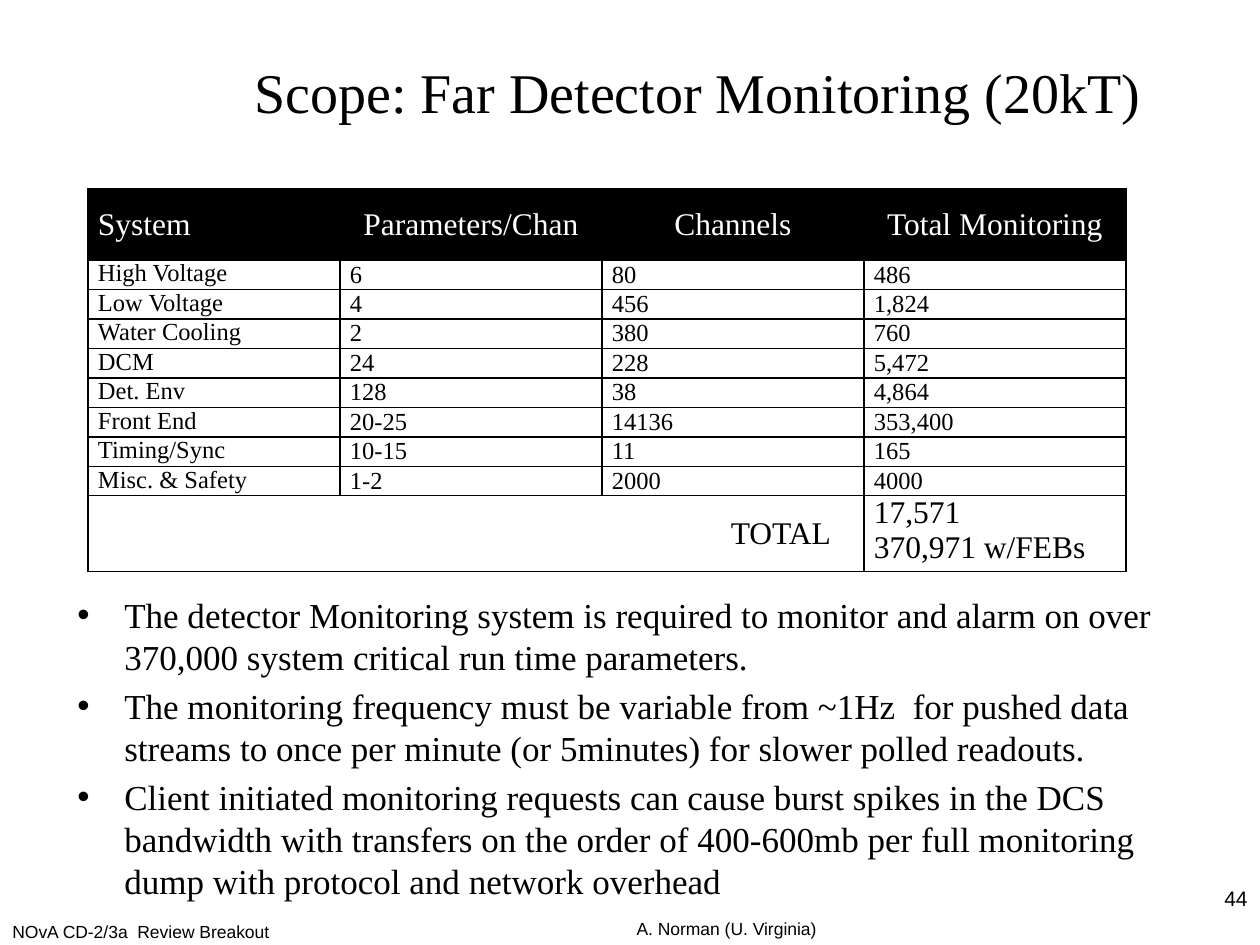
from lxml import etree
from pptx import Presentation, util as u
from pptx.dml.color import RGBColor
from pptx.enum import text as t
from pptx.oxml import ns

SCALE = u.Inches(1) // 126
BLACK = RGBColor(0, 0, 0)
WHITE = RGBColor(255, 255, 255)
SERIF, SANS = "Times New Roman", "Arial"
LEFT, MID, RIGHT = t.PP_ALIGN.LEFT, t.PP_ALIGN.CENTER, t.PP_ALIGN.RIGHT
TOP, CENTER = t.MSO_ANCHOR.TOP, t.MSO_ANCHOR.MIDDLE

HEAD = ["System", "Parameters/Chan", "Channels", "Total Monitoring"]
ROWS = [
    ["High Voltage", "6", "80", "486"],
    ["Low Voltage", "4", "456", "1,824"],
    ["Water Cooling", "2", "380", "760"],
    ["DCM", "24", "228", "5,472"],
    ["Det. Env", "128", "38", "4,864"],
    ["Front End", "20-25", "14136", "353,400"],
    ["Timing/Sync", "10-15", "11", "165"],
    ["Misc. & Safety", "1-2", "2000", "4000"],
]
POINTS = [
    "The detector Monitoring system is required to monitor and alarm on over "
    "370,000 system critical run time parameters.",
    "The monitoring frequency must be variable from ~1Hz  for pushed data "
    "streams to once per minute (or 5minutes) for slower polled readouts.",
    "Client initiated monitoring requests can cause burst spikes in the DCS "
    "bandwidth with transfers on the order of 400-600mb per full monitoring "
    "dump with protocol and network overhead",
]


def px(n):
    return u.Emu(n * SCALE)


def add_bullet(para):
    props = para._p.get_or_add_pPr()
    props.set("marL", str(px(47)))
    props.set("indent", str(px(-47)))
    font = etree.SubElement(props, ns.qn("a:buFont"))
    font.set("typeface", SANS)
    etree.SubElement(props, ns.qn("a:buChar")).set("char", "•")


def write(frame, lines, size, face=SERIF, color=BLACK, align=LEFT,
          bullet=False, gap=0, pitch=None):
    frame.word_wrap = True
    for i, line in enumerate(lines):
        para = frame.add_paragraph() if i else frame.paragraphs[0]
        para.alignment = align
        if bullet:
            add_bullet(para)
        if i and gap:
            para.space_before = u.Pt(gap)
        if pitch:
            para.line_spacing = u.Pt(pitch)
        run = para.add_run()
        run.text = line
        run.font.size = u.Pt(size)
        run.font.name = face
        run.font.color.rgb = color


def add_text(slide, box, lines, size, anchor=TOP, **style):
    frame = slide.shapes.add_textbox(*map(px, box)).text_frame
    frame.vertical_anchor = anchor
    write(frame, lines, size, **style)


def add_borders(cell):
    props = cell._tc.get_or_add_tcPr()
    for i, side in enumerate(("lnL", "lnR", "lnT", "lnB")):
        line = etree.Element(ns.qn("a:" + side), w=str(u.Pt(1)))
        fill = etree.SubElement(line, ns.qn("a:solidFill"))
        etree.SubElement(fill, ns.qn("a:srgbClr"), val=str(BLACK))
        props.insert(i, line)


def fill_cell(cell, lines, size, anchor=CENTER, fill=None, right=10, **style):
    cell.margin_left, cell.margin_right = px(10), px(right)
    cell.margin_top = cell.margin_bottom = 0
    cell.vertical_anchor = anchor
    if fill is None:
        cell.fill.background()
    else:
        cell.fill.solid()
        cell.fill.fore_color.rgb = fill
    write(cell.text_frame, lines, size, **style)


def add_scope(slide):
    widths = [252, 262, 262, 262]
    heights = [71] + [27] * len(ROWS) + [71]
    table = slide.shapes.add_table(
        len(heights), len(widths), px(88), px(189),
        px(sum(widths)), px(sum(heights))).table
    table.first_row = table.horz_banding = False
    for col, width in zip(table.columns, widths):
        col.width = px(width)
    for row, height in zip(table.rows, heights):
        row.height = px(height)

    # Header and systems
    for c, name in enumerate(HEAD):
        fill_cell(table.cell(0, c), [name], 18, fill=BLACK, color=WHITE,
                  align=MID if c else LEFT)
    for r, row in enumerate(ROWS, 1):
        for c, value in enumerate(row):
            fill_cell(table.cell(r, c), [value], 14,
                      anchor=CENTER if c else TOP)

    # Total
    last = len(heights) - 1
    table.cell(last, 0).merge(table.cell(last, 2))
    fill_cell(table.cell(last, 0), ["TOTAL"], 18, align=RIGHT, right=33)
    fill_cell(table.cell(last, 3), ["17,571", "370,971 w/FEBs"], 18,
              anchor=TOP)
    for cell in table.iter_cells():
        add_borders(cell)


def main():
    prs = Presentation()
    prs.slide_width, prs.slide_height = px(1260), px(945)
    slide = prs.slides.add_slide(prs.slide_layouts[6])

    # Title, table and points
    add_text(slide, (241, 18, 914, 147),
             ["Scope: Far Detector Monitoring (20kT)"], 32,
             anchor=CENTER, align=MID)
    add_scope(slide)
    add_text(slide, (65, 587, 1134, 323), POINTS, 20,
             bullet=True, gap=4, pitch=24)

    # Footer
    add_text(slide, (0, 915, 510, 42), ["NOvA CD-2/3a  Review Breakout"], 10,
             face=SANS)
    add_text(slide, (966, 879, 294, 66), ["44"], 12, face=SANS, align=RIGHT)
    add_text(slide, (527, 912, 399, 40), ["A. Norman (U. Virginia)"], 10,
             face=SANS, align=MID)
    prs.save("out.pptx")


if __name__ == "__main__":
    main()
